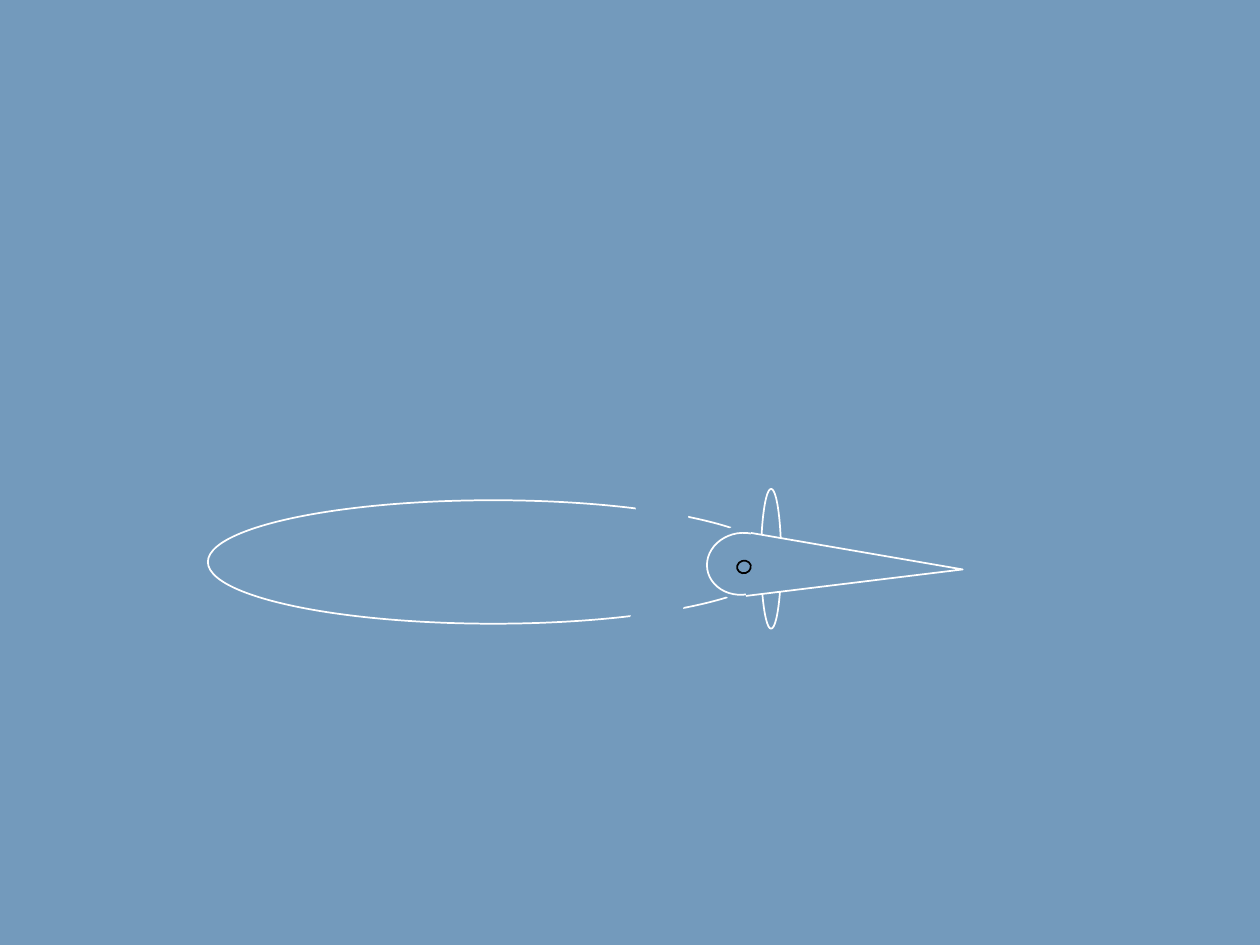
import pptx
import pptx.dml.color
import pptx.enum.shapes
import pptx.oxml
import pptx.oxml.ns
import pptx.util
from pptx.util import Inches

WATER = "739ABC"
WHITE = "FFFFFF"
BLACK = "000000"
SHAPE = pptx.enum.shapes.MSO_SHAPE


def color(value):
    return pptx.dml.color.RGBColor.from_string(value)


class Sketch:
    """Holds the line style and the slide being drawn."""

    line_width = pptx.util.Pt(1)

    def __init__(self, slide):
        self.slide = slide
        self.shapes = slide.shapes

    def background(self, value):
        fill = self.slide.background.fill
        fill.solid()
        fill.fore_color.rgb = color(value)

    def start_group(self):
        self.shapes = self.slide.shapes.add_group_shape().shapes

    def outline(self, shape, line):
        if line is None:
            shape.line.fill.background()
        else:
            shape.line.color.rgb = color(line)
            shape.line.width = self.line_width

    def finish(self, shape, line):
        shape.shadow.inherit = False
        shape.fill.solid()
        shape.fill.fore_color.rgb = color(WATER)
        self.outline(shape, line)
        return shape

    def preset(self, kind, box, line=None, rotation=0):
        shape = self.shapes.add_shape(kind, *map(Inches, box))
        shape.rotation = rotation
        return self.finish(shape, line)

    def ellipse(self, box, line=None, rotation=0):
        return self.preset(SHAPE.OVAL, box, line, rotation)

    def rounded(self, box, rotation):
        shape = self.preset(SHAPE.ROUNDED_RECTANGLE, box, rotation=rotation)
        shape.adjustments[0] = 0.125
        return shape

    def open_path(self, points, line):
        start, *rest = [(Inches(x), Inches(y)) for x, y in points]
        builder = self.shapes.build_freeform(*start)
        builder.add_line_segments(rest, close=False)
        return self.finish(builder.convert_to_shape(), line)

    def straight(self, start, end, line):
        connector = self.shapes.add_connector(
            pptx.enum.shapes.MSO_CONNECTOR.STRAIGHT,
            *map(Inches, (*start, *end)))
        self.outline(connector, line)
        properties = connector._element.spPr
        properties.append(pptx.oxml.parse_xml(
            "<a:effectLst %s/>" % pptx.oxml.ns.nsdecls("a")))
        return connector


def main():
    presentation = pptx.Presentation()
    presentation.slide_width = Inches(10)
    presentation.slide_height = Inches(7.5)
    sketch = Sketch(presentation.slides.add_slide(presentation.slide_layouts[6]))
    sketch.background(WATER)

    # Long oval, with its right end covered
    sketch.ellipse((1.65, 3.97, 4.53, 0.98), WHITE)
    sketch.ellipse((5.64, 4.11, 0.84, 0.73))
    sketch.straight((4.45, 4.06), (6.05, 4.06), WATER)
    sketch.straight((5.16, 4.86), (6.17, 4.85), WATER)

    # Gaps in the oval's outline
    sketch.rounded((5.09, 3.91, 0.39, 0.59), rotation=347)
    sketch.rounded((5.05, 4.55, 0.38, 0.45), rotation=18)

    # Pointed figure: side fins, round end, tapering body and centre ring
    sketch.start_group()
    sketch.ellipse((6.04, 3.88, 0.16, 1.11), WHITE)
    sketch.ellipse((5.61, 4.23, 0.56, 0.49), WHITE, rotation=351)
    sketch.open_path([(5.96, 4.23), (7.64, 4.52), (5.92, 4.73)], WHITE)
    sketch.ellipse((5.85, 4.45, 0.11, 0.1), BLACK, rotation=344)

    presentation.save("out.pptx")


if __name__ == "__main__":
    main()
